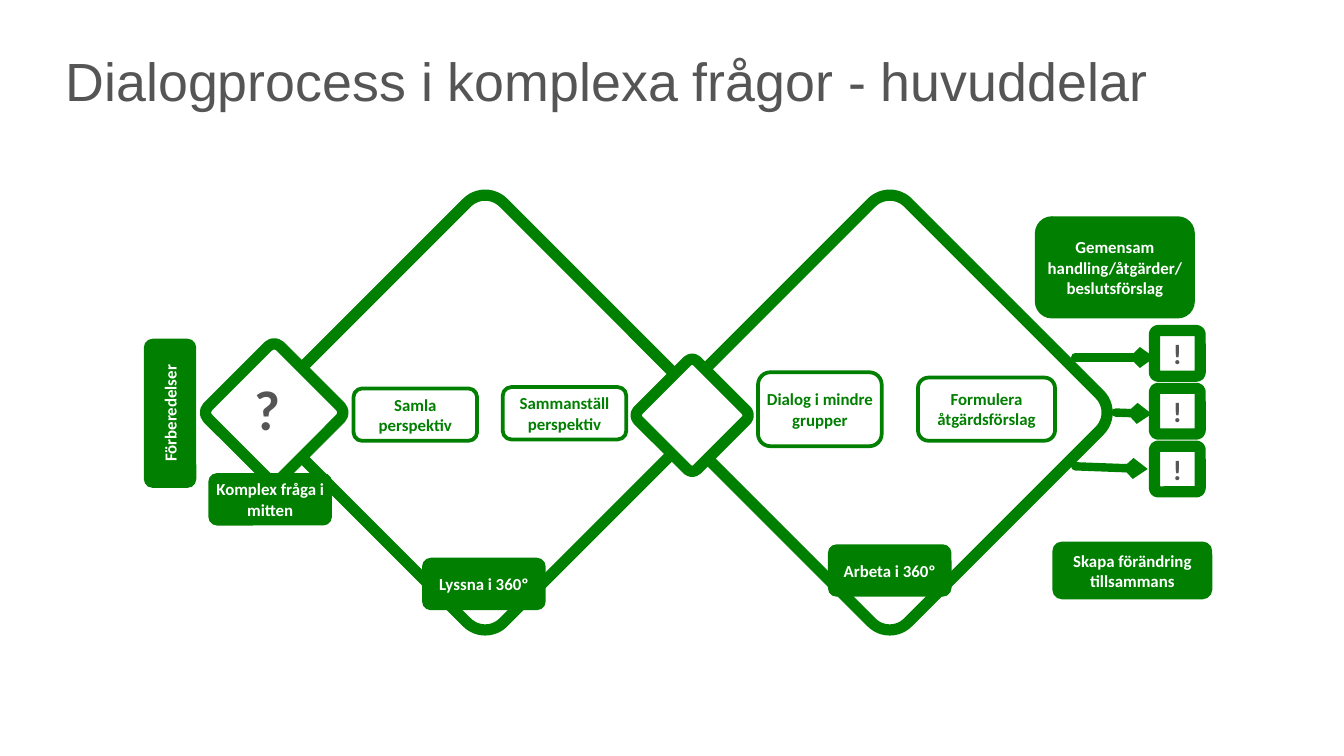
from typing import NamedTuple, Optional

from lxml import etree
from pptx import Presentation
from pptx.dml.color import RGBColor
from pptx.enum.shapes import MSO_CONNECTOR, MSO_SHAPE
from pptx.enum.text import MSO_ANCHOR, PP_ALIGN
from pptx.oxml.ns import qn
from pptx.util import Inches, Pt

ROUNDED = MSO_SHAPE.ROUNDED_RECTANGLE
STRAIGHT = MSO_CONNECTOR.STRAIGHT
MIDDLE, TOP = MSO_ANCHOR.MIDDLE, MSO_ANCHOR.TOP
CENTER, LEFT = PP_ALIGN.CENTER, PP_ALIGN.LEFT

COLORS = {"frame": "008000", "label": "007F01", "text": "555555", "white": "FFFFFF"}


class Frame(NamedTuple):
    left: float
    top: float
    size: float
    rotation: float = 45
    fill: Optional[str] = "white"
    text: str = ""


class Label(NamedTuple):
    text: str
    left: float
    top: float
    width: float = 0.92
    height: float = 0.39
    filled: bool = True
    rotation: float = 0


class Arrow(NamedTuple):
    x1: float
    y1: float
    x2: float
    y2: float


DIAMONDS = [
    Frame(2.41, 1.87, 2.4, fill=None),
    Frame(5.42, 1.87, 2.4, fill=None),
    Frame(4.84, 2.78, 0.62),
    Frame(1.66, 2.69, 0.76),
]
ACTIONS = [Frame(8.59, 2.46 + 0.43 * i, 0.34, rotation=0, text="!") for i in range(3)]
ARROWS = [
    Arrow(8, 2.66, 8.59, 2.66),
    Arrow(8, 3.47, 8.54, 3.49),
    Arrow(8.3, 3.07, 8.57, 3.08),
]
LABELS = [
    Label("Komplex fråga i mitten", 1.55, 3.52),
    Label("Gemensam handling/åtgärder/beslutsförslag", 7.7, 1.61, 1.19, 0.76),
    Label("Lyssna i 360º", 3.14, 4.15),
    Label("Arbeta i 360º", 6.16, 4.05),
    Label("Samla perspektiv", 2.63, 2.89, filled=False),
    Label("Sammanställ perspektiv", 3.74, 2.88, filled=False),
    Label("Dialog i mindre grupper", 5.64, 2.77, height=0.55, filled=False),
    Label("Formulera åtgärdsförslag", 6.83, 2.81, 1.02, 0.47, filled=False),
    Label("Skapa förändring tillsammans", 7.83, 4.03, 1.19, 0.43),
    Label("Förberedelser", 0.71, 2.88, 1.11, rotation=270),
]


def rgb(name: str) -> RGBColor:
    """Return a named colour."""
    return RGBColor.from_string(COLORS[name])


def write(sp, text: str, *, size: float, color: str = "text", font: str = "Calibri",
          bold: bool = True, align=CENTER, anchor=MIDDLE, wrap: bool = True,
          insets: tuple[float, float] = (0.1, 0.05)) -> None:
    """Fill a shape with one formatted paragraph."""
    tf = sp.text_frame
    tf.word_wrap = wrap
    tf.vertical_anchor = anchor
    tf.margin_left = tf.margin_right = Inches(insets[0])
    tf.margin_top = tf.margin_bottom = Inches(insets[1])
    p = tf.paragraphs[0]
    p.alignment = align
    r = p.add_run()
    r.text = text
    r.font.name, r.font.size, r.font.bold = font, Pt(size), bold
    r.font.color.rgb = rgb(color)


def add_text(s, left: float, top: float, width: float, height: float,
             text: str, **style) -> None:
    """Add a text box."""
    sp = s.shapes.add_textbox(Inches(left), Inches(top), Inches(width), Inches(height))
    write(sp, text, **style)


def add_box(s, left: float, top: float, width: float, height: float, *,
            fill: Optional[str] = None, line: Optional[str] = None,
            weight: float = 1, rotation: float = 0):
    """Add a rounded rectangle without shadow."""
    sp = s.shapes.add_shape(ROUNDED, Inches(left), Inches(top), Inches(width), Inches(height))
    sp.shadow.inherit = False
    sp.rotation = rotation
    if fill:
        sp.fill.solid()
        sp.fill.fore_color.rgb = rgb(fill)
    else:
        sp.fill.background()
    if line:
        sp.line.color.rgb = rgb(line)
        sp.line.width = Pt(weight)
    else:
        sp.line.fill.background()
    return sp


def add_frame(s, frame: Frame) -> None:
    """Add a thick square frame."""
    sp = add_box(s, frame.left, frame.top, frame.size, frame.size, fill=frame.fill,
                 line="frame", weight=6, rotation=frame.rotation)
    sp.adjustments[0] = 0.08
    if frame.text:
        write(sp, frame.text, size=15)


def add_label(s, label: Label) -> None:
    """Add a filled or outlined label."""
    sp = add_box(s, label.left, label.top, label.width, label.height,
                 fill="label" if label.filled else None,
                 line=None if label.filled else "label",
                 weight=2, rotation=label.rotation)
    write(sp, label.text, size=9, color="white" if label.filled else "label",
          insets=(0.03, 0.03))


def add_arrow(s, arrow: Arrow) -> None:
    """Add a thick arrow with a round cap and a small head."""
    cx = s.shapes.add_connector(STRAIGHT, *(Inches(v) for v in arrow))
    cx.line.color.rgb = rgb("frame")
    cx.line.width = Pt(4.5)
    ln = cx.line._get_or_add_ln()
    ln.set("cap", "rnd")
    etree.SubElement(ln, qn("a:tailEnd"), type="arrow", w="sm", len="sm")
    etree.SubElement(cx._element.spPr, qn("a:effectLst"))


def main() -> None:
    """Build the slide."""
    prs = Presentation()
    prs.slide_width = Inches(10)
    prs.slide_height = prs.slide_width * 9 // 16
    s = prs.slides.add_slide(prs.slide_layouts[6])
    add_text(s, 0.39, 0.31, 9.22, 0.34, "Dialogprocess i komplexa frågor - huvuddelar",
             size=28.8, font="Arial", bold=False, align=LEFT, anchor=TOP)
    for diamond in DIAMONDS:
        add_frame(s, diamond)
    add_text(s, 1.79, 2.74, 0.4, 0.61, "?", size=30, anchor=TOP, wrap=False)
    for action in ACTIONS:
        add_frame(s, action)
    for arrow in ARROWS:
        add_arrow(s, arrow)
    for label in LABELS:
        add_label(s, label)
    prs.save("out.pptx")


if __name__ == "__main__":
    main()
